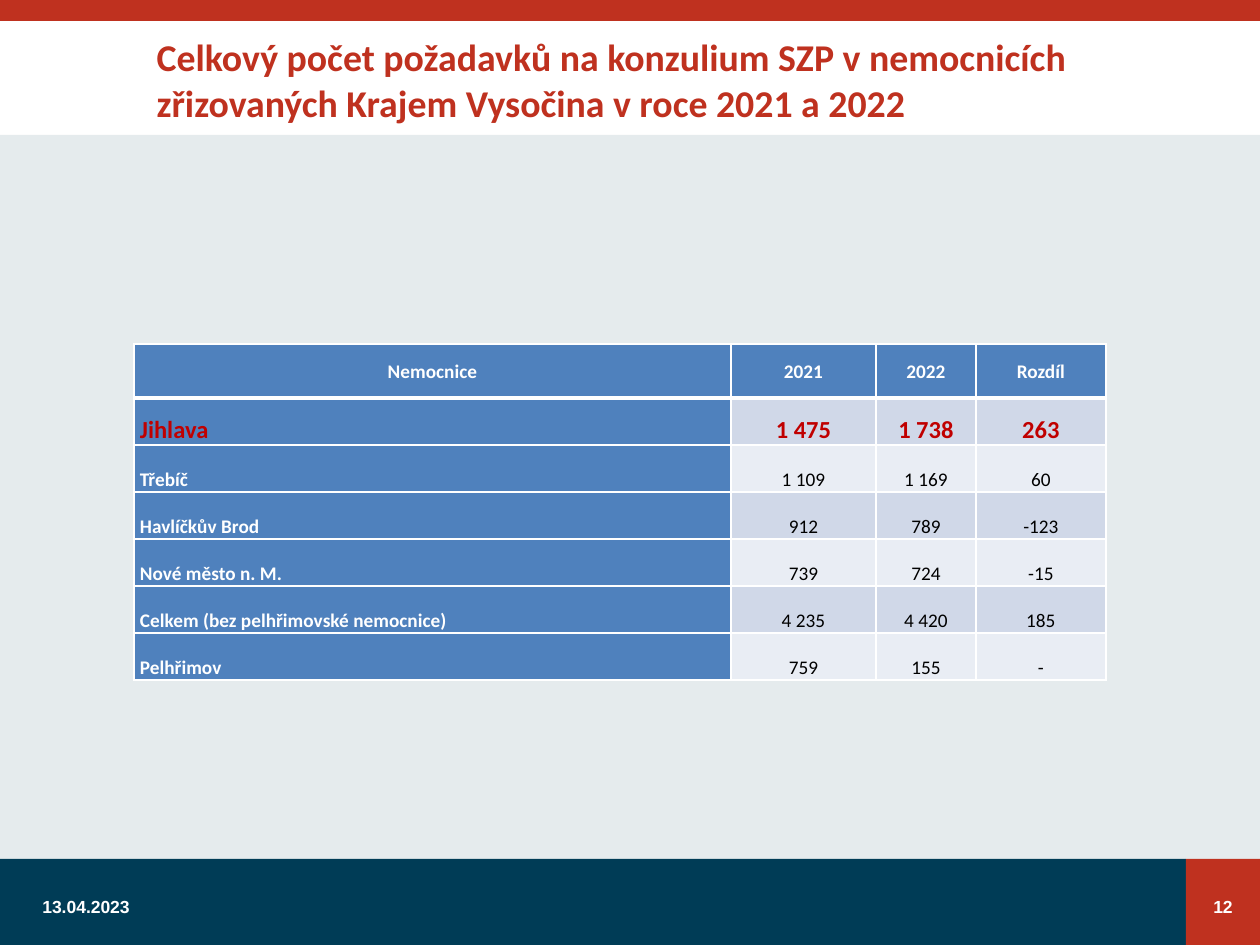
from dataclasses import dataclass

from lxml.etree import SubElement
from pptx import Presentation
from pptx.dml.color import RGBColor
from pptx.enum.shapes import MSO_SHAPE as Preset
from pptx.enum.text import MSO_ANCHOR as Anchor, MSO_AUTO_SIZE as AutoSize, PP_ALIGN as Align
from pptx.oxml.ns import qn
from pptx.util import Emu, Pt

NAVY, RED, WHITE = "003C56", "BF311F", "FFFFFF"
BLUE, HIGHLIGHT, BLACK = "4F81BD", "C00000", "000000"
BANDS = ("D0D8E8", "E9EDF4")


@dataclass(frozen=True)
class Box:
    left: int
    top: int
    width: int
    height: int


@dataclass(frozen=True)
class Panel:
    box: Box
    color: str
    opacity: int = 100


@dataclass(frozen=True)
class Label:
    box: Box
    text: str
    align: Align


@dataclass(frozen=True)
class TextStyle:
    size: float
    color: str
    bold: bool = True
    face: str = "Calibri"


PANELS = (
    Panel(Box(0, 135, 1260, 724), NAVY, 10),
    Panel(Box(0, 859, 1186, 86), NAVY),
    Panel(Box(0, 0, 1260, 21), RED),
    Panel(Box(1186, 859, 74, 86), RED),
)
LABELS = (
    Label(Box(30, 889, 292, 34), "13.04.2023", Align.LEFT),
    Label(Box(1037, 889, 208, 34), "12", Align.RIGHT),
)
TITLE = (
    "Celkový počet požadavků na konzulium SZP v nemocnicích\v"
    "zřizovaných Krajem Vysočina v roce 2021 a 2022"
)
TITLE_BOX = Box(144, 26, 1053, 100)
TABLE_BOX = Box(134, 344, 972, 336)
COLUMN_WIDTHS = (597, 145, 100, 130)
HEADER_HEIGHT, ROW_HEIGHT = 54, 47
HOSPITALS = (
    ("Nemocnice", "2021", "2022", "Rozdíl"),
    ("Jihlava", "1 475", "1 738", "263"),
    ("Třebíč", "1 109", "1 169", "60"),
    ("Havlíčkův Brod", "912", "789", "-123"),
    ("Nové město n. M.", "739", "724", "-15"),
    ("Celkem (bez pelhřimovské nemocnice)", "4 235", "4 420", "185"),
    ("Pelhřimov", "759", "155", "-"),
)


def px(length: int) -> Emu:
    """Turn pixels into EMU."""
    return Emu(round(length * 914400 / 126))


def rgb(color: str) -> RGBColor:
    """Turn a hex string into a colour."""
    return RGBColor.from_string(color)


def place(box: Box) -> tuple:
    """Give left, top, width and height in EMU."""
    return px(box.left), px(box.top), px(box.width), px(box.height)


def style(paragraph, look: TextStyle, align: Align) -> None:
    """Set the font and alignment of a paragraph."""
    paragraph.alignment = align
    font = paragraph.font
    font.name, font.size, font.bold = look.face, Pt(look.size), look.bold
    font.color.rgb = rgb(look.color)


def add_panel(slide, panel: Panel) -> None:
    """Draw a borderless colour panel."""
    shape = slide.shapes.add_shape(Preset.RECTANGLE, *place(panel.box))
    shape.shadow.inherit = False
    shape.line.fill.background()
    shape.fill.solid()
    shape.fill.fore_color.rgb = rgb(panel.color)
    if panel.opacity < 100:
        color = shape.fill._xPr.find(f".//{qn('a:srgbClr')}")
        SubElement(color, qn("a:alpha"), val=str(panel.opacity * 1000))


def add_label(slide, label: Label) -> None:
    """Write a footer label."""
    frame = slide.shapes.add_textbox(*place(label.box)).text_frame
    frame.word_wrap = True
    frame.vertical_anchor = Anchor.MIDDLE
    frame.text = label.text
    style(frame.paragraphs[0], TextStyle(10, WHITE, face="Arial"), label.align)


def set_title(slide) -> None:
    """Move and format the title placeholder."""
    title = slide.shapes.title
    title.left, title.top, title.width, title.height = place(TITLE_BOX)
    frame = title.text_frame
    frame.auto_size = AutoSize.NONE
    frame.vertical_anchor = Anchor.TOP
    frame.margin_top = px(8)
    frame.text = TITLE
    style(frame.paragraphs[0], TextStyle(21.6, RED), Align.LEFT)


def set_borders(cell, top: int, bottom: int) -> None:
    """Give a cell white borders, with top and bottom widths in points."""
    properties = cell._tc.get_or_add_tcPr()
    for side, width in (("L", 1), ("R", 1), ("T", top), ("B", bottom)):
        line = SubElement(properties, qn(f"a:ln{side}"), w=str(Pt(width)))
        SubElement(SubElement(line, qn("a:solidFill")), qn("a:srgbClr"), val=WHITE)


def cell_style(row: int, column: int) -> TextStyle:
    """Choose the text style for a table position."""
    if row == 1:
        return TextStyle(14, HIGHLIGHT)
    if row == 0 or column == 0:
        return TextStyle(11, WHITE)
    return TextStyle(11, BLACK, bold=False)


def fill_cell(cell, text: str, row: int, column: int) -> None:
    """Write and format one table cell."""
    is_header, is_name = row == 0, column == 0
    set_borders(cell, top=3 if row == 1 else 1, bottom=3 if is_header else 1)
    cell.fill.solid()
    cell.fill.fore_color.rgb = rgb(BLUE if is_header or is_name else BANDS[(row - 1) % 2])
    cell.margin_left = cell.margin_right = px(6)
    cell.margin_top = cell.margin_bottom = 0
    cell.vertical_anchor = Anchor.MIDDLE if is_header else Anchor.BOTTOM
    cell.text = text
    paragraph = cell.text_frame.paragraphs[0]
    paragraph.line_spacing = 1.07
    paragraph.space_after = Pt(8)
    align = Align.LEFT if is_name and not is_header else Align.CENTER
    style(paragraph, cell_style(row, column), align)


def add_hospital_table(slide) -> None:
    """Draw the table of requests by hospital."""
    table = slide.shapes.add_table(len(HOSPITALS), len(COLUMN_WIDTHS), *place(TABLE_BOX)).table
    table.first_row = table.horz_banding = False
    for column, width in zip(table.columns, COLUMN_WIDTHS):
        column.width = px(width)
    for row, texts in enumerate(HOSPITALS):
        table.rows[row].height = px(ROW_HEIGHT if row else HEADER_HEIGHT)
        for column, text in enumerate(texts):
            fill_cell(table.cell(row, column), text, row, column)


def main() -> None:
    """Build and save the slide."""
    deck = Presentation()
    deck.slide_width, deck.slide_height = px(1260), px(945)
    slide = deck.slides.add_slide(deck.slide_layouts[5])
    for panel in PANELS:
        add_panel(slide, panel)
    for label in LABELS:
        add_label(slide, label)
    set_title(slide)
    add_hospital_table(slide)
    deck.save("out.pptx")


if __name__ == "__main__":
    main()
